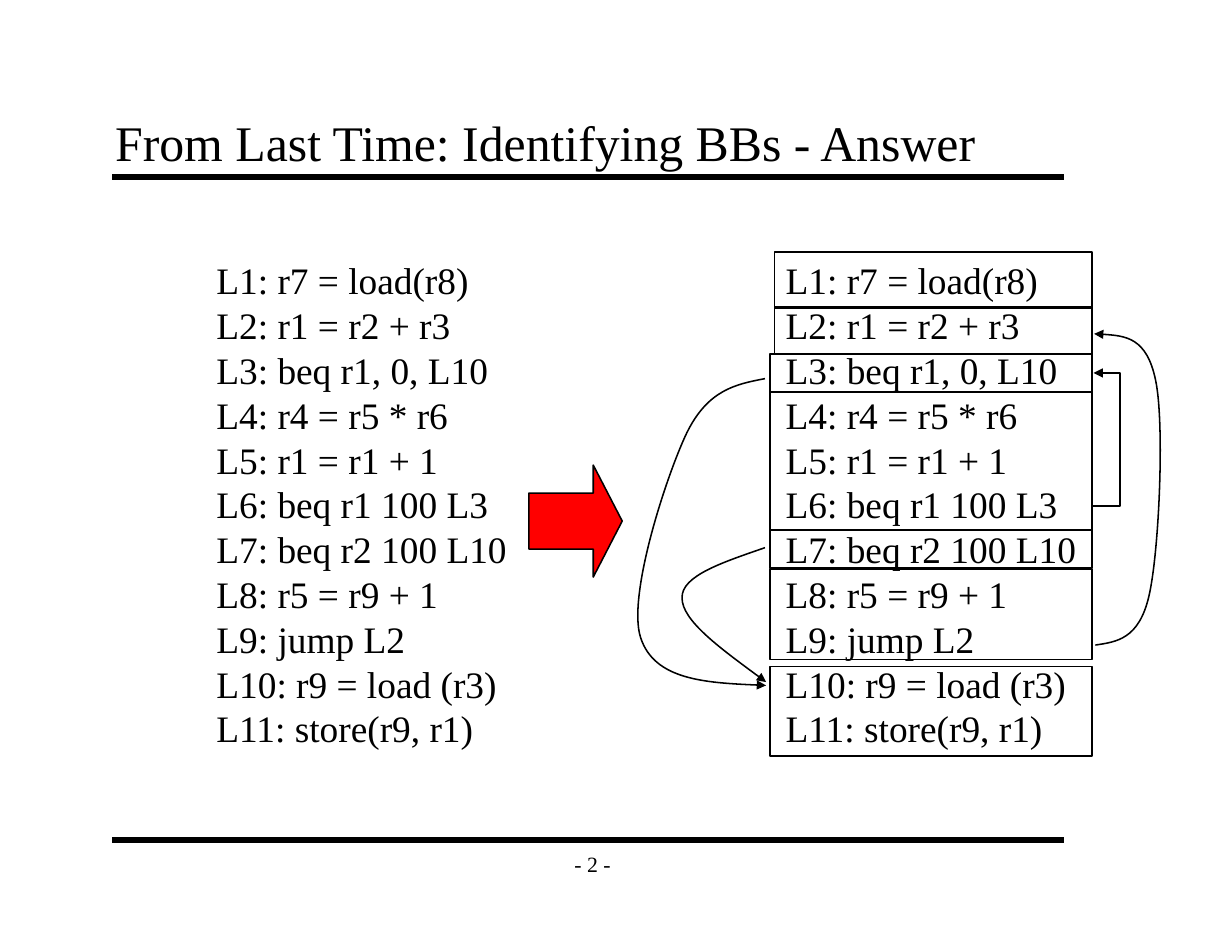
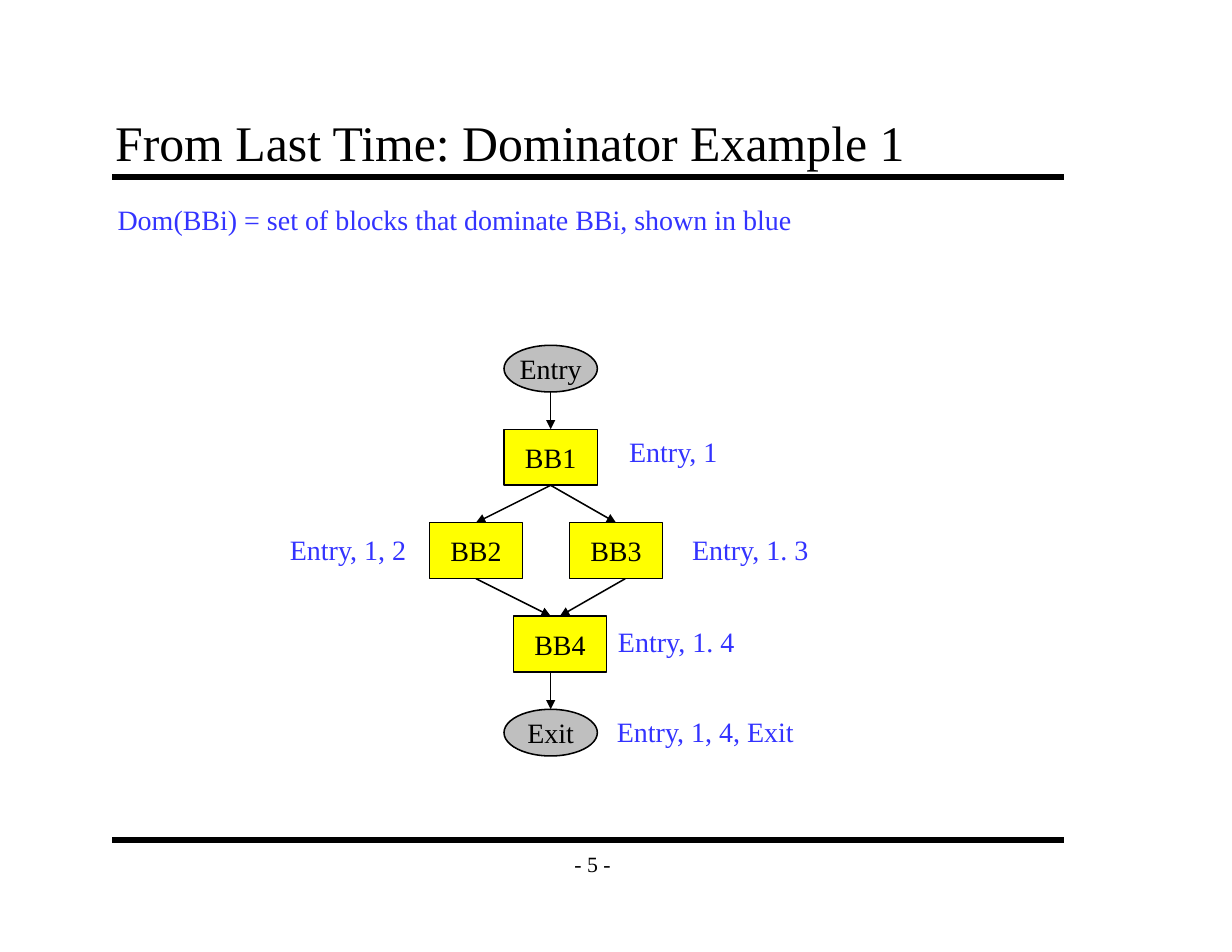
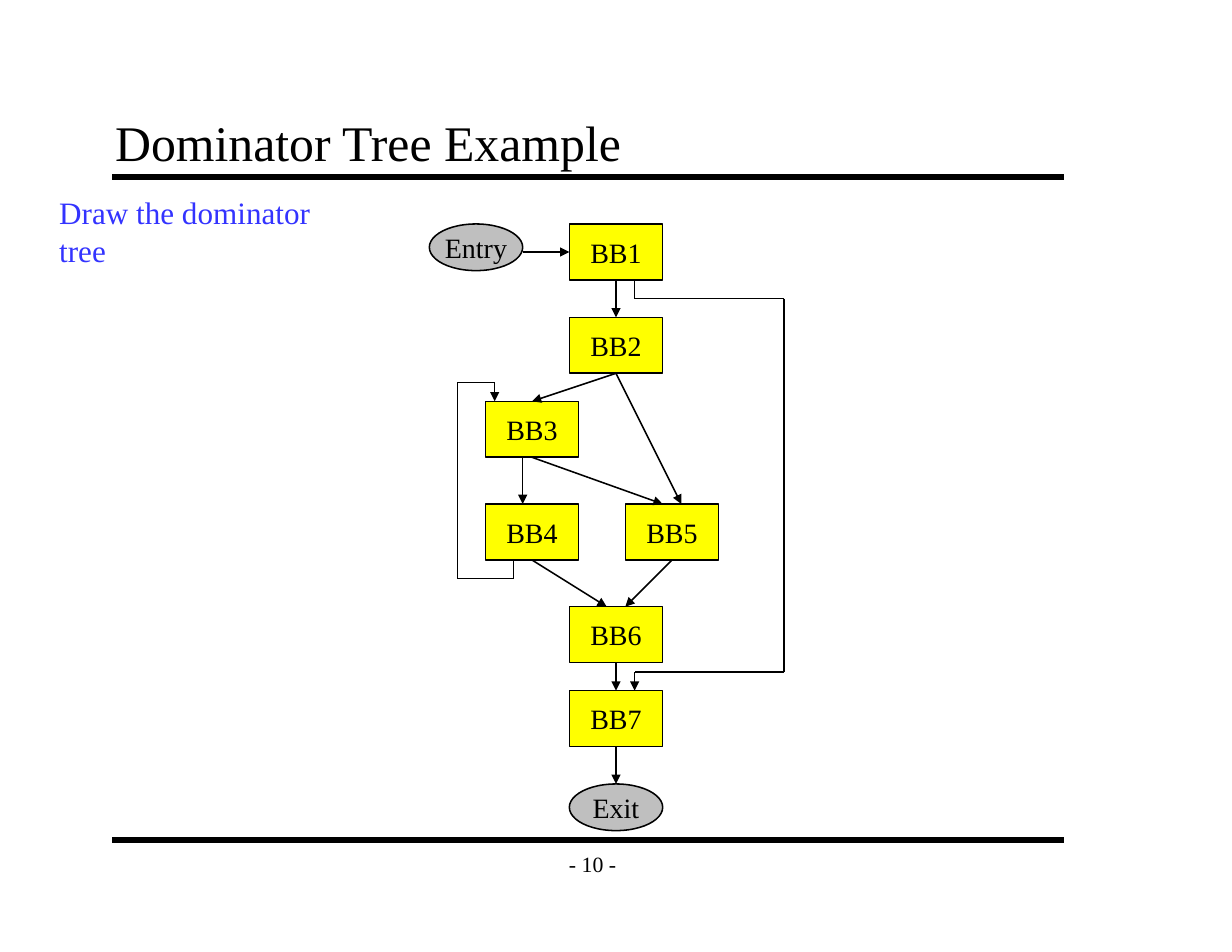
from lxml import etree
from pptx import Presentation
from pptx.dml.color import RGBColor
from pptx.enum.shapes import MSO_CONNECTOR, MSO_SHAPE
from pptx.enum.text import MSO_ANCHOR, MSO_AUTO_SIZE, PP_ALIGN
from pptx.oxml.ns import qn
from pptx.util import Pt

STRAIGHT, ELBOW = MSO_CONNECTOR.STRAIGHT, MSO_CONNECTOR.ELBOW
RECT, OVAL, RIGHT_ARROW = MSO_SHAPE.RECTANGLE, MSO_SHAPE.OVAL, MSO_SHAPE.RIGHT_ARROW
MIDDLE, BOTTOM = MSO_ANCHOR.MIDDLE, MSO_ANCHOR.BOTTOM
LEFT, CENTER = PP_ALIGN.LEFT, PP_ALIGN.CENTER
NO_FIT, GROW = MSO_AUTO_SIZE.NONE, MSO_AUTO_SIZE.SHAPE_TO_FIT_TEXT

FONT = "Times New Roman"
COLORS = {"ink": "000000", "note": "3333FF", "block": "FFFF00",
          "terminal": "BFBFBF", "arrow": "FF0000"}
NODE_W, BLOCK_H, TERMINAL_H = 60, 36, 30

CODE = ["L1: r7 = load(r8)", "L2: r1 = r2 + r3", "L3: beq r1, 0, L10",
        "L4: r4 = r5 * r6", "L5: r1 = r1 + 1", "L6: beq r1 100 L3",
        "L7: beq r2 100 L10", "L8: r5 = r9 + 1", "L9: jump L2",
        "L10: r9 = load (r3)", "L11: store(r9, r1)"]

# Left, top and height of each basic block; all end at the same right edge.
CODE_BLOCKS = [(3, 0, 36), (3, 35.3, 30.2), (0, 65.5, 24.5), (0, 90, 88.6),
               (0, 178.6, 24.5), (0, 203.8, 58.3), (0, 266.4, 57.6)]
CODE_RIGHT = 207

# Start point, then two control points and an end point per curve.
JUMPS = [
    [(209.2, 252.7), (222.8, 250.6), (237.2, 249.1), (243.7, 221),
     (250.2, 193), (253.8, 110.9), (248, 82.8),
     (242.3, 54.7), (225, 53.3), (208.4, 52.6)],
    [(-3.2, 190.1), (-29.9, 199.4), (-57.2, 208.1), (-56.5, 222.5),
     (-56.5, 236.9), (-29.9, 256.3), (-2.5, 276.5)],
    [(-3.2, 81.4), (-22, 85), (-40, 88.6), (-53.6, 116.6),
     (-66.6, 144), (-91.8, 221), (-83.2, 247.7),
     (-74.5, 275), (-38.5, 277.2), (-2.5, 278.6)],
]

DOM_NODES = {"Entry": (48, 0), "BB1": (48, 54), "BB2": (0, 114),
             "BB3": (90, 114), "BB4": (54, 174), "Exit": (48, 234)}
DOM_EDGES = [[(78, 30), (78, 54)], [(78, 90), (120, 114)], [(78, 90), (30, 114)],
             [(30, 150), (78, 174)], [(126, 150), (84, 174)], [(78, 210), (78, 234)]]
DOM_SETS = [("Entry, 1", 121.4, 54, 72), ("Entry, 1, 2", -96.7, 117.1, 90),
            ("Entry, 1. 3", 161.8, 117.1, 90), ("Entry, 1. 4", 114.2, 176.2, 90),
            ("Entry, 1, 4, Exit", 113.5, 234, 130)]

TREE_NODES = {"Entry": (0, 0), "BB1": (90, 0), "BB2": (90, 60), "BB3": (36, 114),
              "BB4": (36, 180), "BB5": (126, 180), "BB6": (90, 246),
              "BB7": (90, 300), "Exit": (90, 360)}
TREE_EDGES = [
    [(60, 18), (90, 18)], [(120, 36), (120, 60)], [(120, 96), (66, 114)],
    [(120, 96), (162, 180)], [(60, 150), (60, 180)], [(66, 150), (150, 180)],
    [(66, 216), (114, 246)], [(156, 216), (126, 246)], [(120, 282), (120, 300)],
    [(120, 336), (120, 360)],
    [(132, 36), (132, 48), (228, 48), (228, 288), (132, 288), (132, 300)],
    [(54, 216), (54, 228), (18, 228), (18, 102), (42, 102), (42, 114)],
]


def rgb(name):
    return RGBColor.from_string(COLORS[name])


def set_line(shape, width=1, arrow=False):
    shape.line.color.rgb = rgb("ink")
    shape.line.width = Pt(width)
    if arrow:
        etree.SubElement(shape.line._get_or_add_ln(), qn("a:tailEnd"), type="triangle")


def set_text(tf, lines, size, color="ink", align=LEFT, spacing=None):
    tf.text = "\n".join(lines)
    for p in tf.paragraphs:
        p.alignment = align
        p.line_spacing = spacing
        p.font.name = FONT
        p.font.size = Pt(size)
        p.font.color.rgb = rgb(color)


def set_margins(tf, side, end):
    tf.margin_left = tf.margin_right = Pt(side)
    tf.margin_top = tf.margin_bottom = Pt(end)


def add_text(s, lines, left, top, width, size, color="ink"):
    height = len(lines) * size * 1.2 + 7.2
    tf = s.shapes.add_textbox(Pt(left), Pt(top), Pt(width), Pt(height)).text_frame
    tf.word_wrap = False
    tf.auto_size = GROW
    set_text(tf, lines, size, color, spacing=Pt(size * 1.2))


def add_box(s, kind, left, top, width, height, fill=None):
    sp = s.shapes.add_shape(kind, Pt(left), Pt(top), Pt(width), Pt(height))
    sp.shadow.inherit = False
    if fill:
        sp.fill.solid()
        sp.fill.fore_color.rgb = rgb(fill)
    else:
        sp.fill.background()
    set_line(sp)
    return sp


def add_line(s, start, end, width=1, arrow=False, kind=STRAIGHT):
    line = s.shapes.add_connector(kind, *(Pt(v) for v in (*start, *end)))
    set_line(line, width, arrow)
    etree.SubElement(line._element.spPr, qn("a:effectLst"))
    return line


def add_curve(s, points):
    """Draw an arrow along joined cubic curves: a start, then three points each."""
    start, *rest = [(Pt(x), Pt(y)) for x, y in points]
    builder = s.shapes.build_freeform(*start)
    builder.add_line_segments(rest, close=False)
    sp = builder.convert_to_shape()
    outline = next(sp._element.iter(qn("a:path")))
    segments = list(outline)[1:]
    for i in range(0, len(segments), 3):
        curve = etree.SubElement(outline, qn("a:cubicBezTo"))
        for segment in segments[i:i + 3]:
            curve.append(segment[0])
            outline.remove(segment)
    sp.shadow.inherit = False
    sp.fill.background()
    set_line(sp, arrow=True)


def add_slide(prs, title, number):
    s = prs.slides.add_slide(prs.slide_layouts[5])
    for y in (114, 540):
        add_line(s, (72, y), (684, y), width=4)

    sp = s.shapes.title
    sp.left, sp.top, sp.width, sp.height = Pt(66), Pt(66), Pt(612), Pt(48)
    tf = sp.text_frame
    set_text(tf, [title], 32)
    set_margins(tf, 8, 4)
    tf.vertical_anchor = BOTTOM
    tf.auto_size = NO_FIT

    tf = s.shapes.add_textbox(Pt(354), Pt(540), Pt(54), Pt(30)).text_frame
    set_text(tf, [f"- {number} -"], 14, align=CENTER)
    set_margins(tf, 8, 4)
    tf.vertical_anchor = MIDDLE
    tf.word_wrap = False
    return s


def add_code_blocks(s, left, top):
    """Draw the code split into basic blocks, with its jumps."""
    add_text(s, CODE, left + 3, top, 201, 24)
    for x, y, height in CODE_BLOCKS:
        add_box(s, RECT, left + x, top + y, CODE_RIGHT - x, height)
    right = left + CODE_RIGHT
    loop = add_line(s, (right, top + 163.4), (right + 1, top + 77.8),
                    arrow=True, kind=ELBOW)
    guides = next(loop._element.iter(qn("a:avLst")))
    etree.SubElement(guides, qn("a:gd"), name="adj1", fmla="val 1800000")
    for points in JUMPS:
        add_curve(s, [(left + x, top + y) for x, y in points])


def add_graph(s, left, top, nodes, edges):
    """Draw named nodes, and edges that end in an arrowhead."""
    for name, (x, y) in nodes.items():
        if name.startswith("BB"):
            kind, height, fill = RECT, BLOCK_H, "block"
        else:
            kind, height, fill = OVAL, TERMINAL_H, "terminal"
        sp = add_box(s, kind, left + x, top + y, NODE_W, height, fill)
        tf = sp.text_frame
        set_text(tf, [name], 18, align=CENTER)
        tf.vertical_anchor = MIDDLE
        tf.word_wrap = False
    for edge in edges:
        points = [(left + x, top + y) for x, y in edge]
        for start, end in zip(points, points[1:]):
            add_line(s, start, end, arrow=end == points[-1])


def build_answer(prs):
    s = add_slide(prs, "From Last Time: Identifying BBs - Answer", 2)
    add_text(s, CODE, 132, 162, 201, 24)
    arrow = add_box(s, RIGHT_ARROW, 340, 299, 60, 72, "arrow")
    arrow.adjustments[1] = 0.31
    add_code_blocks(s, 495, 162)


def build_dominators(prs):
    s = add_slide(prs, "From Last Time: Dominator Example 1", 5)
    left, top = 276, 222
    add_graph(s, left, top, DOM_NODES, DOM_EDGES)
    for text, x, y, width in DOM_SETS:
        add_text(s, [text], left + x, top + y, width, 18, "note")
    add_text(s, ["Dom(BBi) = set of blocks that dominate BBi, shown in blue"],
             68.5, 126.7, 449, 18, "note")


def build_tree(prs):
    s = add_slide(prs, "Dominator Tree Example", 10)
    add_text(s, ["Draw the dominator tree"], 31, 121, 210, 20, "note")
    add_graph(s, 276, 144, TREE_NODES, TREE_EDGES)


def main():
    prs = Presentation()
    prs.slide_width, prs.slide_height = Pt(792), Pt(612)
    build_answer(prs)
    build_dominators(prs)
    build_tree(prs)
    prs.save("out.pptx")


if __name__ == "__main__":
    main()
